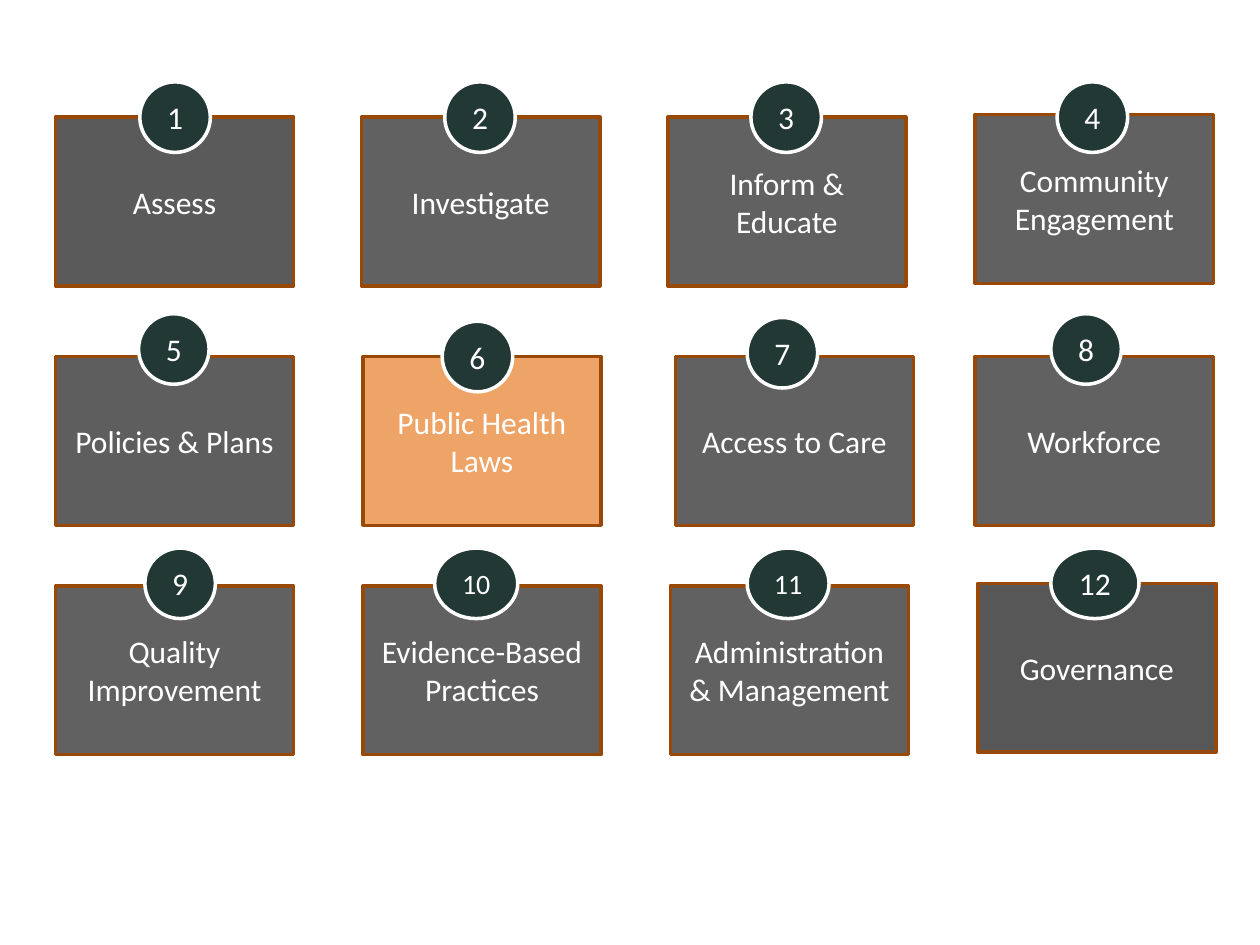
from collections import namedtuple

from lxml import etree
from pptx import Presentation
from pptx.dml.color import RGBColor
from pptx.enum.shapes import MSO_SHAPE as Shape
from pptx.enum.text import MSO_ANCHOR as Anchor, PP_ALIGN as Align
from pptx.oxml.ns import qn
from pptx.util import Inches, Pt

WHITE = RGBColor(0xFF, 0xFF, 0xFF)
BLACK = RGBColor(0x00, 0x00, 0x00)
NEAR_BLACK = RGBColor(0x0D, 0x0D, 0x0D)
ORANGE = RGBColor(0xE4, 0x6C, 0x0A)
BROWN = RGBColor(0x98, 0x48, 0x07)
DARK_GREEN = RGBColor(0x21, 0x38, 0x35)

CARD_WIDTH, CARD_HEIGHT = 1.89, 1.34
BADGE_SIZE = 0.56

# left and top place the card; badge_dx and badge_dy are the badge's offset from it
Card = namedtuple(
    "Card",
    "label left top badge_dx badge_dy fill opacity badge_width badge_font",
    defaults=(BLACK, 62, BADGE_SIZE, 18),
)

CARDS = [
    Card("Assess", 0.44, 0.93, 0.67, -0.28, NEAR_BLACK, 68),
    Card("Investigate", 2.87, 0.93, 0.66, -0.28),
    Card("Inform & Educate", 5.3, 0.93, 0.66, -0.28),
    Card("Community Engagement", 7.74, 0.91, 0.65, -0.26),
    Card("Policies & Plans", 0.44, 2.83, 0.66, -0.34, opacity=63),
    Card("Public Health Laws", 2.88, 2.83, 0.63, -0.28, ORANGE),
    Card("Access to Care", 5.36, 2.83, 0.57, -0.31),
    Card("Workforce", 7.74, 2.83, 0.6, -0.34),
    Card("Quality Improvement", 0.44, 4.65, 0.71, -0.3),
    Card("Evidence-Based Practices", 2.88, 4.65, 0.57, -0.3,
         badge_width=0.66, badge_font=16),
    Card("Administration & Management", 5.32, 4.65, 0.61, -0.3,
         badge_width=0.65, badge_font=16),
    Card("Governance", 7.76, 4.63, 0.58, -0.28, opacity=66, badge_width=0.7),
]


def add_labelled_shape(slide, kind, box, text, fill, line, size=18):
    shape = slide.shapes.add_shape(kind, *(Inches(length) for length in box))
    shape.shadow.inherit = False
    shape.fill.solid()
    shape.fill.fore_color.rgb = fill
    shape.line.color.rgb = line
    shape.line.width = Pt(2)
    frame = shape.text_frame
    frame.word_wrap = True
    frame.vertical_anchor = Anchor.MIDDLE
    paragraph = frame.paragraphs[0]
    paragraph.text = text
    paragraph.alignment = Align.CENTER
    paragraph.font.name = "Calibri"
    paragraph.font.size = Pt(size)
    paragraph.font.color.rgb = WHITE
    return shape


def set_fill_opacity(shape, percent):
    color = shape.fill._xPr.find(qn("a:solidFill")).find(qn("a:srgbClr"))
    etree.SubElement(color, qn("a:alpha")).set("val", str(percent * 1000))


def add_card(slide, card):
    box = (card.left, card.top, CARD_WIDTH, CARD_HEIGHT)
    shape = add_labelled_shape(slide, Shape.RECTANGLE, box, card.label, card.fill, BROWN)
    set_fill_opacity(shape, card.opacity)


def add_badge(slide, card, number):
    box = (card.left + card.badge_dx, card.top + card.badge_dy,
           card.badge_width, BADGE_SIZE)
    add_labelled_shape(slide, Shape.OVAL, box, str(number), DARK_GREEN, WHITE,
                       card.badge_font)


def main():
    presentation = Presentation()
    presentation.slide_width = Inches(10)
    presentation.slide_height = Inches(7.5)
    slide = presentation.slides.add_slide(presentation.slide_layouts[6])
    for number, card in enumerate(CARDS, start=1):
        add_card(slide, card)
        add_badge(slide, card, number)
    presentation.save("out.pptx")


if __name__ == "__main__":
    main()
